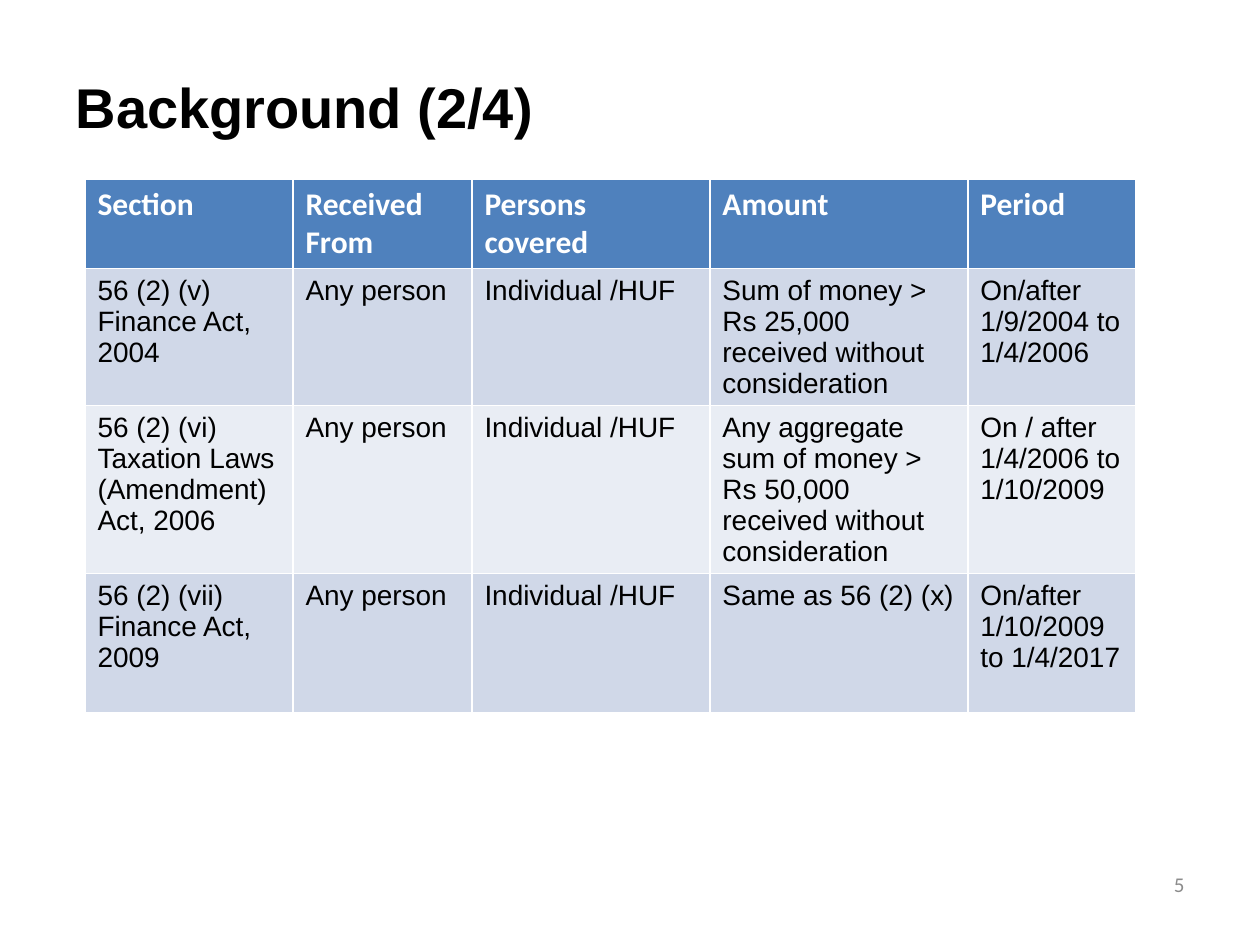
from pptx import Presentation
from pptx.dml.color import RGBColor as RGB
from pptx.enum.text import MSO_ANCHOR as Anchor, PP_ALIGN as Align
from pptx.util import Pt

TITLE = "Background (2/4)"
PAGE = "5"
HEAD = ["Section", "Received From", "Persons covered", "Amount", "Period"]
ROWS = [
    [["56 (2) (v)", "Finance Act, 2004"], ["Any person"], ["Individual /HUF"],
     ["Sum of money > Rs 25,000 received without consideration"],
     ["On/after 1/9/2004 to 1/4/2006"]],
    [["56 (2) (vi)", "Taxation Laws (Amendment) Act, 2006"], ["Any person"],
     ["Individual /HUF"],
     ["Any aggregate sum of money > Rs 50,000 received without consideration"],
     ["On / after 1/4/2006 to 1/10/2009"]],
    [["56 (2) (vii)", "Finance Act, 2009"], ["Any person"], ["Individual /HUF"],
     ["Same as 56 (2) (x)"], ["On/after 1/10/2009 to 1/4/2017"]],
]
WIDTHS = [208, 179, 238, 258, 168]
HEIGHTS = [88, 137, 168, 139]
INK = {"head": "4F81BD", "odd": "D0D8E8", "even": "E9EDF4",
       "white": "FFFFFF", "black": "000000", "gray": "8C8C8C"}
PX = 914400 // 126


def paint(hue):
    return RGB.from_string(INK[hue])


def place(shape, *box):
    shape.left, shape.top, shape.width, shape.height = [n * PX for n in box]


def write(frame, lines, size, face, hue, bold=False, align=Align.LEFT):
    for i, line in enumerate(lines):
        para = frame.paragraphs[0] if i == 0 else frame.add_paragraph()
        para.alignment = align
        run = para.add_run()
        run.text = line
        font = run.font
        font.size, font.name, font.bold = Pt(size), face, bold
        font.color.rgb = paint(hue)


deck = Presentation()
deck.slide_width, deck.slide_height = 1260 * PX, 945 * PX
slide = deck.slides.add_slide(deck.slide_layouts[5])

title = slide.shapes.title
place(title, 63, 38, 1134, 137)
title.text_frame.vertical_anchor = Anchor.MIDDLE
write(title.text_frame, [TITLE], 32, "Arial", "black", True)

grid = slide.shapes.add_table(
    len(HEIGHTS), len(WIDTHS), 85 * PX, 179 * PX,
    sum(WIDTHS) * PX, sum(HEIGHTS) * PX).table
for col, wide in zip(grid.columns, WIDTHS):
    col.width = wide * PX
for row, high in zip(grid.rows, HEIGHTS):
    row.height = high * PX

for r, texts in enumerate([[[word] for word in HEAD]] + ROWS):
    fill = "head" if r == 0 else "odd" if r % 2 else "even"
    style = (18, "Calibri", "white", True) if r == 0 else (16, "Arial", "black")
    for c, lines in enumerate(texts):
        cell = grid.cell(r, c)
        cell.fill.solid()
        cell.fill.fore_color.rgb = paint(fill)
        write(cell.text_frame, lines, *style)

page = slide.shapes.add_textbox(0, 0, 0, 0)
place(page, 903, 859, 294, 50)
page.text_frame.word_wrap = True
page.text_frame.vertical_anchor = Anchor.MIDDLE
write(page.text_frame, [PAGE], 12, "Calibri", "gray", align=Align.RIGHT)

deck.save("out.pptx")
